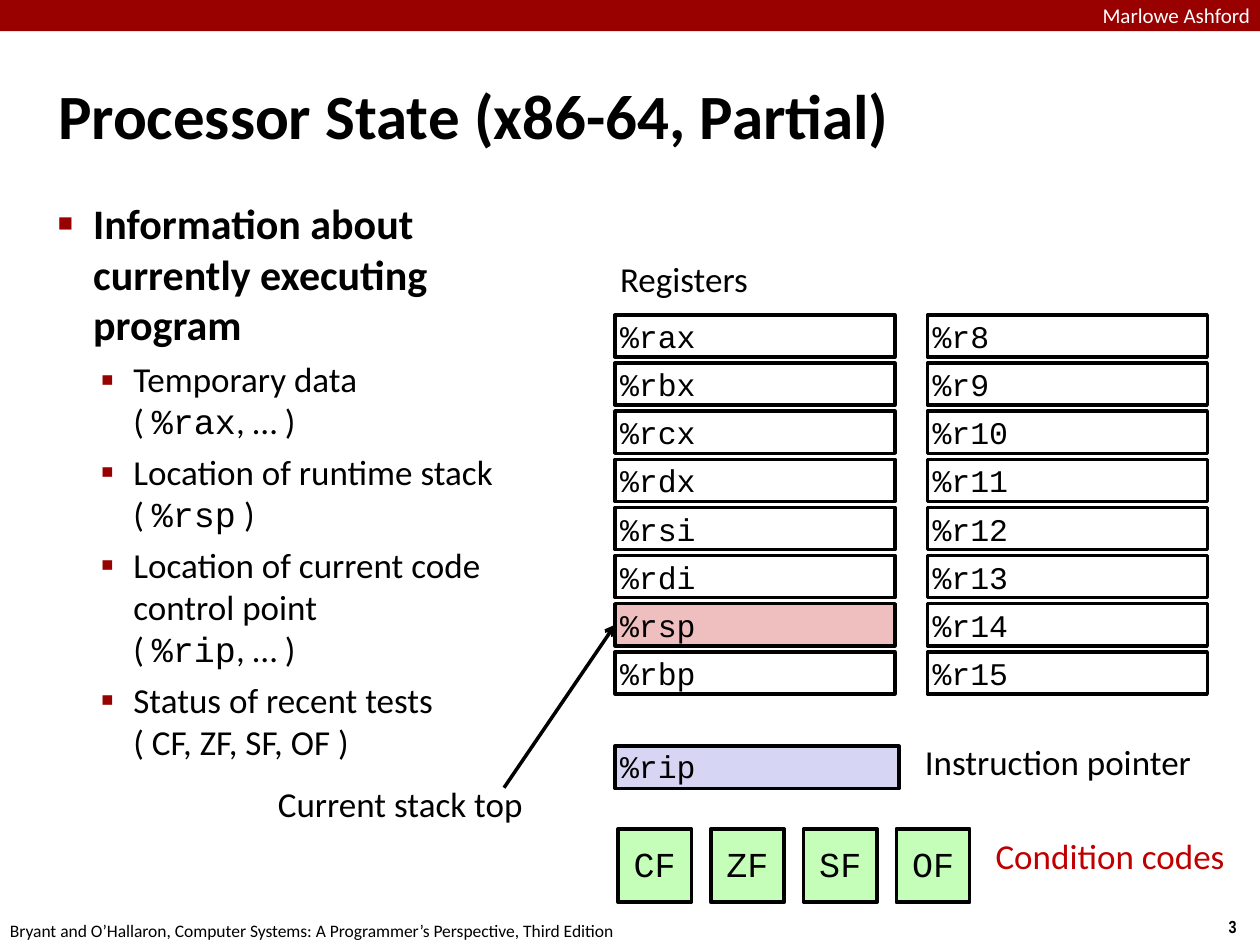
from dataclasses import dataclass

from lxml import etree
from pptx import Presentation
from pptx.dml.color import RGBColor
from pptx.enum.shapes import MSO_CONNECTOR, MSO_SHAPE
from pptx.enum.text import MSO_ANCHOR, PP_ALIGN
from pptx.oxml.ns import qn
from pptx.util import Cm, Pt

RECT = MSO_SHAPE.RECTANGLE
STRAIGHT = MSO_CONNECTOR.STRAIGHT
LEFT, CENTER, RIGHT = PP_ALIGN.LEFT, PP_ALIGN.CENTER, PP_ALIGN.RIGHT
TOP, MIDDLE = MSO_ANCHOR.TOP, MSO_ANCHOR.MIDDLE

BLACK = RGBColor(0x00, 0x00, 0x00)
WHITE = RGBColor(0xFF, 0xFF, 0xFF)
DARK_RED = RGBColor(0x99, 0x00, 0x00)
RED = RGBColor(0xC0, 0x00, 0x00)
PINK = RGBColor(0xEF, 0xBF, 0xBF)
LAVENDER = RGBColor(0xD6, 0xD6, 0xF4)
GREEN = RGBColor(0xC5, 0xFE, 0xB8)

SANS, MONO, NARROW = "Calibri", "Courier New", "Arial Narrow"
BULLET_FONT = "Arial"
INSET = 0.1


@dataclass
class Label:
    text: str
    left: float
    top: float
    width: float
    height: float
    size: int = 20
    color: RGBColor = BLACK
    font: str = SANS
    bold: bool = False
    align: PP_ALIGN = LEFT
    inset: float = INSET


@dataclass
class Box:
    text: str
    left: float
    top: float
    width: float
    height: float
    fill: RGBColor | None = None
    size: int = 18
    align: PP_ALIGN = LEFT
    spacing: float = 1.0


@dataclass
class Bullet:
    char: str
    percent: int
    margin: float
    hang: float
    before: int
    size: int
    bold: bool


@dataclass
class Detail:
    text: str
    before: str
    code: str
    after: str


TOPIC = Bullet("■", 60, 0.71, 0.71, 6, 24, True)
ITEM = Bullet("▪", 110, 1.52, 0.66, 5, 20, False)

DETAILS = [
    Detail("Temporary data", "( ", "%rax", ", … )"),
    Detail("Location of runtime stack", "( ", "%rsp", " )"),
    Detail("Location of current code control point", "( ", "%rip", ", … )"),
    Detail("Status of recent tests", "( CF, ZF, SF, OF )", "", ""),
]

LABELS = [
    Label("3", 24.42, 18.37, 0.86, 0.68, 10, font=NARROW, bold=True, align=CENTER),
    Label("Bryant and O’Hallaron, Computer Systems: A Programmer’s Perspective, "
          "Third Edition", 0.1, 18.45, 12.36, 0.6, 10, align=CENTER),
    Label("Marlowe Ashford", 20.2, 0.06, 5, 0.5, 12, WHITE, align=RIGHT, inset=0),
    Label("Registers", 12.4, 5.1, 2.84, 1.07),
    Label("Current stack top", 5.43, 15.67, 5.28, 1.07, align=CENTER),
    Label("Instruction pointer", 18.46, 14.83, 5.74, 1.07, align=CENTER),
    Label("Condition codes", 19.97, 16.73, 5, 1.24, color=RED),
]

REGISTER_COLUMNS = {
    12.4: ["%rax", "%rbx", "%rcx", "%rdx", "%rsi", "%rdi", "%rsp", "%rbp"],
    18.7: [f"%r{n}" for n in range(8, 16)],
}
REGISTER_TOP, REGISTER_PITCH = 6.35, 0.97
FLAGS = ["CF", "ZF", "SF", "OF"]
FLAG_LEFT, FLAG_PITCH = 12.46, 1.87


def set_frame(tf, inset: float, anchor: MSO_ANCHOR, wrap: bool) -> None:
    tf.margin_left = tf.margin_right = tf.margin_top = tf.margin_bottom = Cm(inset)
    tf.vertical_anchor = anchor
    tf.word_wrap = wrap


def add_run(p, text: str, size: int, font: str = SANS,
            color: RGBColor = BLACK, bold: bool = False) -> None:
    r = p.add_run()
    r.text = text
    r.font.size = Pt(size)
    r.font.name = font
    r.font.bold = bold
    r.font.color.rgb = color


def add_label(s, label: Label) -> None:
    tb = s.shapes.add_textbox(Cm(label.left), Cm(label.top),
                              Cm(label.width), Cm(label.height))
    set_frame(tb.text_frame, label.inset, TOP, label.align == RIGHT)
    p = tb.text_frame.paragraphs[0]
    p.alignment = label.align
    add_run(p, label.text, label.size, label.font, label.color, label.bold)


def add_box(s, box: Box):
    sp = s.shapes.add_shape(RECT, Cm(box.left), Cm(box.top),
                            Cm(box.width), Cm(box.height))
    sp.shadow.inherit = False
    if box.fill is None:
        sp.fill.background()
    else:
        sp.fill.solid()
        sp.fill.fore_color.rgb = box.fill
    sp.line.color.rgb = BLACK
    sp.line.width = Pt(2)
    set_frame(sp.text_frame, INSET, MIDDLE, True)
    p = sp.text_frame.paragraphs[0]
    p.alignment = box.align
    p.line_spacing = box.spacing
    add_run(p, box.text, box.size, MONO)
    return sp


def set_bullet(p, bullet: Bullet) -> None:
    p.space_before = Pt(bullet.before)
    pPr = p._p.get_or_add_pPr()
    pPr.set("marL", str(Cm(bullet.margin)))
    pPr.set("indent", str(-Cm(bullet.hang)))
    color = etree.SubElement(pPr, qn("a:buClr"))
    etree.SubElement(color, qn("a:srgbClr"), val=str(DARK_RED))
    etree.SubElement(pPr, qn("a:buSzPct"), val=str(bullet.percent * 1000))
    etree.SubElement(pPr, qn("a:buFont"), typeface=BULLET_FONT)
    etree.SubElement(pPr, qn("a:buChar"), char=bullet.char)


def add_outline(s) -> None:
    tb = s.shapes.add_textbox(Cm(1.07), Cm(3.89), Cm(9.27), Cm(12))
    tf = tb.text_frame
    set_frame(tf, INSET, TOP, True)
    p = tf.paragraphs[0]
    set_bullet(p, TOPIC)
    add_run(p, "Information about currently executing program",
            TOPIC.size, bold=TOPIC.bold)
    for detail in DETAILS:
        p = tf.add_paragraph()
        set_bullet(p, ITEM)
        add_run(p, detail.text, ITEM.size)
        p.add_line_break()
        add_run(p, detail.before, ITEM.size)
        if detail.code:
            add_run(p, detail.code, ITEM.size, MONO)
            add_run(p, detail.after, ITEM.size)


def add_arrow(s, left: float, top: float, target) -> None:
    """Draw an arrow from a point to the left side of the target."""
    line = s.shapes.add_connector(STRAIGHT, Cm(left), Cm(top), target.left, target.top)
    line.end_connect(target, 1)
    line.line.color.rgb = BLACK
    line.line.width = Pt(2)
    etree.SubElement(line.line._get_or_add_ln(), qn("a:tailEnd"), type="arrow")
    etree.SubElement(line._element.spPr, qn("a:effectLst"))


def main() -> None:
    prs = Presentation()
    prs.slide_width, prs.slide_height = Cm(25.4), Cm(19.05)
    s = prs.slides.add_slide(prs.slide_layouts[5])

    band = s.shapes.add_shape(RECT, 0, 0, prs.slide_width, Cm(0.63))
    band.shadow.inherit = False
    band.fill.solid()
    band.fill.fore_color.rgb = DARK_RED
    band.line.fill.background()

    title = s.shapes.title
    title.left, title.top, title.width, title.height = Cm(1.07), Cm(0.71), Cm(23.3), Cm(3.18)
    set_frame(title.text_frame, INSET, MIDDLE, True)
    p = title.text_frame.paragraphs[0]
    p.alignment = LEFT
    add_run(p, "Processor State (x86-64, Partial)", 36, bold=True)

    add_outline(s)
    for label in LABELS:
        add_label(s, label)

    registers = {}
    for left, names in REGISTER_COLUMNS.items():
        for row, name in enumerate(names):
            fill = PINK if name == "%rsp" else None
            top = REGISTER_TOP + row * REGISTER_PITCH
            registers[name] = add_box(s, Box(name, left, top, 5.64, 0.85, fill))

    add_box(s, Box("%rip", 12.4, 15.04, 5.72, 0.86, LAVENDER, spacing=0.95))
    for i, flag in enumerate(FLAGS):
        add_box(s, Box(flag, FLAG_LEFT + i * FLAG_PITCH, 16.71, 1.48, 1.48,
                       GREEN, 20, CENTER, 0.95))
    add_arrow(s, 10.16, 15.88, registers["%rsp"])

    prs.save("out.pptx")


if __name__ == "__main__":
    main()
